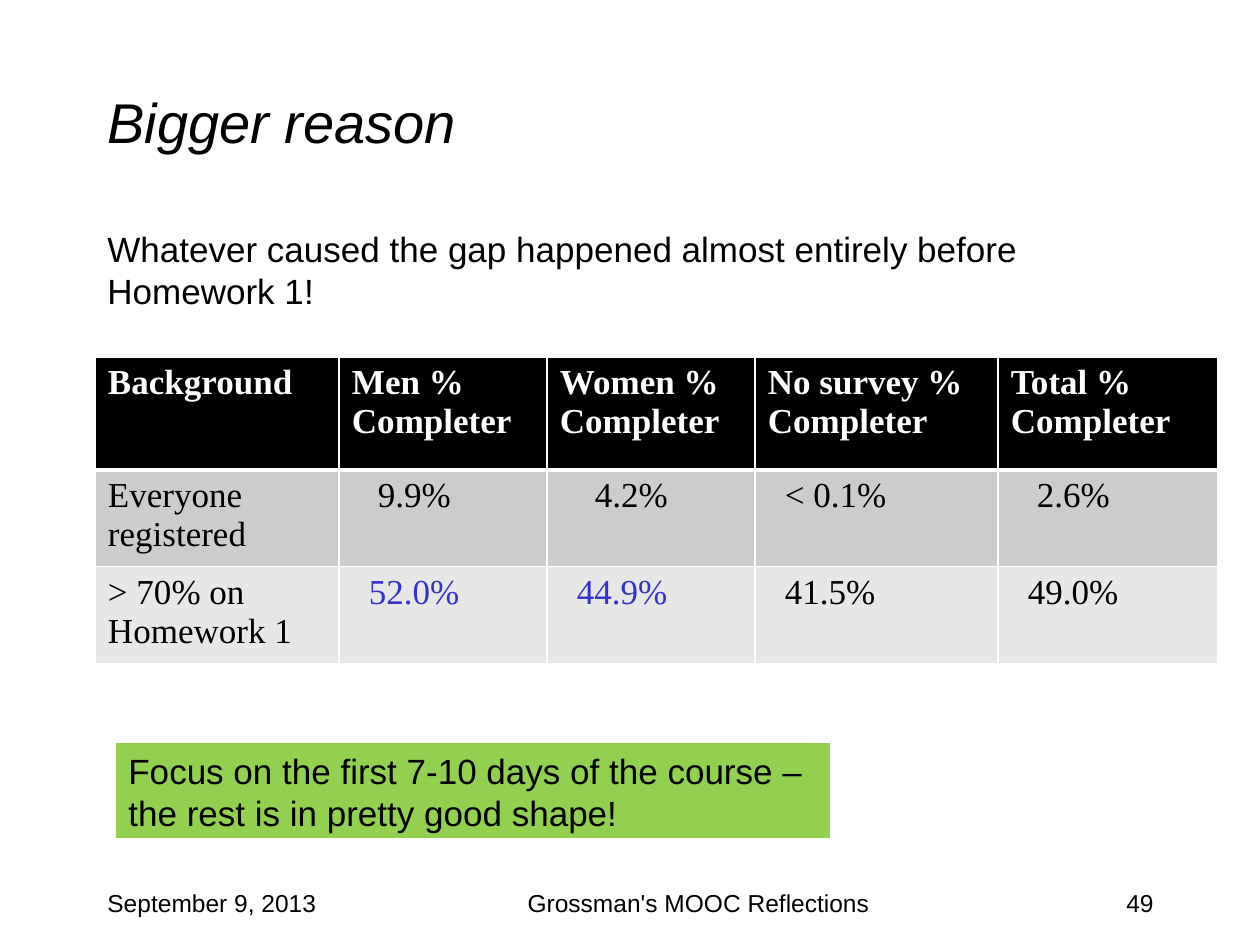
import dataclasses

import lxml.etree
import pptx
import pptx.dml.color
import pptx.enum.shapes
import pptx.enum.text
import pptx.oxml.ns
import pptx.util

PX = 914400 // 126
ALIGN = pptx.enum.text.PP_ALIGN
ANCHOR = pptx.enum.text.MSO_ANCHOR


@dataclasses.dataclass(frozen=True)
class Theme:
    """Colours, fonts and type sizes of the slide."""
    ink: str = "000000"
    paper: str = "FFFFFF"
    accent: str = "3333CC"
    callout: str = "92D050"
    bands: tuple = ("000000", "CCCCCC", "E7E7E7")
    sans: str = "Arial"
    serif: str = "Times New Roman"
    title: int = 32
    body: int = 20
    footer: int = 14


THEME = Theme()


def rgb(value):
    """Turn a hex string into a colour."""
    return pptx.dml.color.RGBColor.from_string(value)


def scaled(box):
    """Turn a box in px into EMU."""
    return [length * PX for length in box]


def write(frame, text, size, font=THEME.sans, color=THEME.ink, bold=False,
          italic=False, align=ALIGN.LEFT, space_before=0):
    """Fill a text frame and format all its paragraphs alike."""
    frame.word_wrap = True
    frame.text = text
    for para in frame.paragraphs:
        para.alignment = align
        para.space_before = pptx.util.Pt(space_before)
        for span in para.runs:
            span.font.name = font
            span.font.size = pptx.util.Pt(size)
            span.font.color.rgb = rgb(color)
            span.font.bold = bold
            span.font.italic = italic


def add_text(page, box, text, size, anchor=ANCHOR.TOP, **style):
    """Place a wrapped text box."""
    frame = page.shapes.add_textbox(*scaled(box)).text_frame
    write(frame, text, size, **style)
    frame.vertical_anchor = anchor


def add_border(cell, side, points):
    """Draw one white border of a table cell."""
    line = lxml.etree.SubElement(
        cell._tc.get_or_add_tcPr(), pptx.oxml.ns.qn(f"a:{side}"),
        w=str(pptx.util.Pt(points)))
    fill = lxml.etree.SubElement(line, pptx.oxml.ns.qn("a:solidFill"))
    lxml.etree.SubElement(fill, pptx.oxml.ns.qn("a:srgbClr"), val=THEME.paper)


def add_completion_table(page, box):
    """Build the table of completion rates by background."""
    rows = [
        ["Background", "Men % Completer", "Women %\nCompleter",
         "No survey %\nCompleter", "Total %\nCompleter"],
        ["Everyone registered", "9.9%", "4.2%", "< 0.1%", "2.6%"],
        ["> 70% on Homework 1", "52.0%", "44.9%", "41.5%", "49.0%"],
    ]
    indents = [[0] * 5, [0, 26, 35, 17, 26], [0, 17, 17, 17, 17]]
    highlights = {(2, 1), (2, 2)}
    table = page.shapes.add_table(len(rows), len(rows[0]), *scaled(box)).table
    table.horz_banding = False
    for column, width in zip(table.columns, (244, 208, 208, 243, 220)):
        column.width = width * PX
    for row, height in zip(table.rows, (113, 90, 90)):
        row.height = height * PX
    for r, texts in enumerate(rows):
        for c, text in enumerate(texts):
            cell = table.cell(r, c)
            header = r == 0
            color = THEME.paper if header else THEME.ink
            if (r, c) in highlights:
                color = THEME.accent
            write(cell.text_frame, text, THEME.body, font=THEME.serif,
                  color=color, bold=header)
            cell.margin_left = (13 + indents[r][c]) * PX
            for side in ("lnL", "lnR", "lnT", "lnB"):
                heavy = (r, side) in ((0, "lnB"), (1, "lnT"))
                add_border(cell, side, 3 if heavy else 1)
            cell.fill.solid()
            cell.fill.fore_color.rgb = rgb(THEME.bands[r])


def add_callout(page, box, text):
    """Place the green box with the conclusion."""
    shape = page.shapes.add_shape(
        pptx.enum.shapes.MSO_SHAPE.RECTANGLE, *scaled(box))
    shape.shadow.inherit = False
    shape.fill.solid()
    shape.fill.fore_color.rgb = rgb(THEME.callout)
    shape.line.fill.background()
    write(shape.text_frame, text, THEME.body, space_before=4)
    shape.text_frame.vertical_anchor = ANCHOR.TOP


def add_footer(page, box):
    """Place date, talk name and page number along the bottom."""
    left, top, width, height = box
    side = 262
    add_text(page, (left, top, side, height), "September 9, 2013", THEME.footer)
    add_text(page, (left + 252, top, 703, height),
             "Grossman's MOOC Reflections", THEME.footer, align=ALIGN.CENTER)
    add_text(page, (left + width - side, top, side, height), "49",
             THEME.footer, align=ALIGN.RIGHT)


def main():
    """Build the slide and save it."""
    deck = pptx.Presentation()
    deck.slide_width, deck.slide_height = scaled((1260, 945))
    page = deck.slides.add_slide(deck.slide_layouts[6])
    add_text(page, (95, 42, 1071, 158), "Bigger reason", THEME.title,
             anchor=ANCHOR.MIDDLE, italic=True)
    add_text(page, (95, 221, 1071, 483),
             "Whatever caused the gap happened almost entirely before Homework 1!",
             THEME.body, space_before=4)
    add_completion_table(page, (95, 357, 1123, 293))
    add_callout(page, (116, 743, 714, 95),
                "Focus on the first 7-10 days of the course – "
                "the rest is in pretty good shape!")
    add_footer(page, (95, 882, 1071, 63))
    deck.save("out.pptx")


if __name__ == "__main__":
    main()
